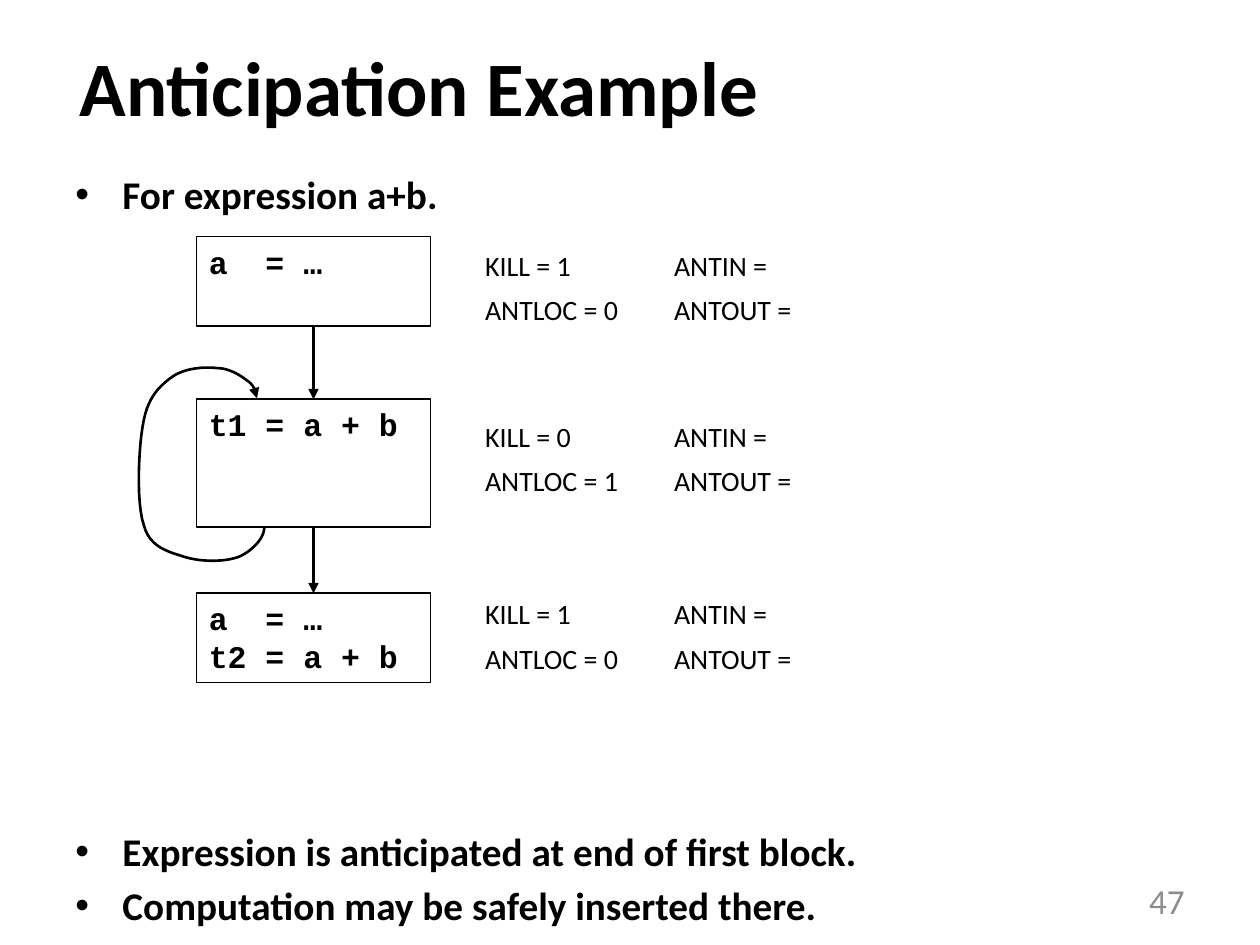
from dataclasses import dataclass

import pptx
import pptx.dml.color
import pptx.enum.shapes
import pptx.enum.text
import pptx.oxml
import pptx.oxml.ns
import pptx.util
from pptx.util import Cm, Pt

COLORS = {"ink": "000000", "number": "8C8C8C"}
TITLE = dict(name="Calibri", size=Pt(44), bold=True)
BODY = dict(name="Calibri", size=Pt(22.4), bold=True)
CODE = dict(name="Courier New", size=Pt(18), bold=True)
LABEL = dict(name="Calibri", size=Pt(16))
NUMBER = dict(name="Calibri", size=Pt(20))

BLOCK_LEFT, BLOCK_WIDTH = 3.96, 4.72
KILL_LEFT, ANTICIPATED_LEFT = 9.53, 13.34
CURVE_STEPS = 12


@dataclass
class Block:
    top: float
    height: float
    code: list[str]
    label_top: float
    kill: int
    antloc: int


BLOCKS = [
    Block(4.77, 1.8, ["a  = …"], 4.88, 1, 0),
    Block(8.05, 2.57, ["t1 = a + b"], 8.33, 0, 1),
    Block(11.96, 1.8, ["a  = …", "t2 = a + b"], 11.91, 1, 0),
]

# Loop edge: start point, then two control points and an end point per curve
LOOP_START = (5.33, 10.62)
LOOP_CURVES = [
    ((5.33, 10.87), (5.05, 11.13), (4.8, 11.23)),
    ((4.52, 11.33), (4.06, 11.33), (3.73, 11.23)),
    ((3.43, 11.13), (3.02, 11.05), (2.9, 10.59)),
    ((2.74, 10.13), (2.79, 8.97), (2.9, 8.46)),
    ((3.0, 7.98), (3.23, 7.77), (3.48, 7.59)),
    ((3.73, 7.42), (4.11, 7.39), (4.37, 7.42)),
    ((4.62, 7.42), (4.85, 7.57), (4.98, 7.67)),
    ((5.13, 7.77), (5.16, 7.9), (5.18, 8.03)),
]


def rgb(color: str):
    return pptx.dml.color.RGBColor.from_string(COLORS[color])


def write(frame, lines: list[str], font: dict, color: str = "ink",
          align: str = "LEFT", before: float = 0) -> None:
    """Fill a text frame with one formatted paragraph per line."""
    frame.text = "\n".join(lines)
    for paragraph in frame.paragraphs:
        paragraph.alignment = getattr(pptx.enum.text.PP_ALIGN, align)
        paragraph.space_before = Pt(before)
        for run in paragraph.runs:
            for attribute, value in font.items():
                setattr(run.font, attribute, value)
            run.font.color.rgb = rgb(color)


def add_text(slide, left: float, top: float, width: float, height: float,
             lines: list[str], font: dict, wrap: bool = True, **options):
    box = slide.shapes.add_textbox(Cm(left), Cm(top), Cm(width), Cm(height))
    box.text_frame.word_wrap = wrap
    write(box.text_frame, lines, font, **options)
    return box


def add_bullets(frame) -> None:
    for paragraph in frame.paragraphs:
        properties = paragraph._p.get_or_add_pPr()
        properties.set("marL", str(Cm(0.95)))
        properties.set("indent", str(-Cm(0.95)))
        for tag, name, value in (("a:buFont", "typeface", "Arial"),
                                 ("a:buChar", "char", "•")):
            bullet = pptx.oxml.parse_xml(f"<{tag} {pptx.oxml.ns.nsdecls('a')}/>")
            bullet.set(name, value)
            properties.append(bullet)


def add_block(slide, block: Block):
    """Draw a basic block with its data-flow facts beside it."""
    shape = slide.shapes.add_shape(
        pptx.enum.shapes.MSO_SHAPE.RECTANGLE,
        Cm(BLOCK_LEFT), Cm(block.top), Cm(BLOCK_WIDTH), Cm(block.height))
    shape.shadow.inherit = False
    shape.fill.background()
    shape.line.color.rgb = rgb("ink")
    shape.line.width = Pt(1)
    shape.text_frame.vertical_anchor = pptx.enum.text.MSO_ANCHOR.TOP
    write(shape.text_frame, block.code, CODE)

    facts = [f"KILL = {block.kill}", f"ANTLOC = {block.antloc}"]
    add_text(slide, KILL_LEFT, block.label_top, 3.25, 1.83, facts, LABEL,
             wrap=False, before=6)
    add_text(slide, ANTICIPATED_LEFT, block.label_top, 2.95, 1.83,
             ["ANTIN =", "ANTOUT ="], LABEL, wrap=False, before=6)
    return shape


def style_arrow(shape) -> None:
    shape.line.color.rgb = rgb("ink")
    shape.line.width = Pt(1.5)
    namespace = pptx.oxml.ns.nsdecls("a")
    outline = shape.element.spPr.find(pptx.oxml.ns.qn("a:ln"))
    outline.append(pptx.oxml.parse_xml(f'<a:tailEnd {namespace} type="triangle"/>'))


def add_arrow(slide, upper, lower) -> None:
    connector = slide.shapes.add_connector(
        pptx.enum.shapes.MSO_CONNECTOR.STRAIGHT, 0, 0, 0, 0)
    connector.begin_connect(upper, 2)
    connector.end_connect(lower, 0)
    style_arrow(connector)
    connector.element.spPr.append(
        pptx.oxml.parse_xml(f"<a:effectLst {pptx.oxml.ns.nsdecls('a')}/>"))


def curve_points(start: tuple, curves: list[tuple]) -> list[tuple]:
    """Sample a chain of cubic Bézier curves."""
    points = []
    for first, second, end in curves:
        for step in range(1, CURVE_STEPS + 1):
            t = step / CURVE_STEPS
            weights = ((1 - t) ** 3, 3 * t * (1 - t) ** 2, 3 * t * t * (1 - t), t ** 3)
            corners = (start, first, second, end)
            points.append(tuple(
                Cm(sum(weight * corner[axis] for weight, corner in zip(weights, corners)))
                for axis in (0, 1)))
        start = end
    return points


def add_loop(slide) -> None:
    builder = slide.shapes.build_freeform(*(Cm(value) for value in LOOP_START))
    builder.add_line_segments(curve_points(LOOP_START, LOOP_CURVES), close=False)
    loop = builder.convert_to_shape()
    loop.shadow.inherit = False
    loop.fill.background()
    style_arrow(loop)


def main() -> None:
    presentation = pptx.Presentation()
    presentation.slide_width, presentation.slide_height = Cm(25.4), Cm(19.05)
    slide = presentation.slides.add_slide(presentation.slide_layouts[5])

    # Title
    title = slide.shapes.title
    title.left, title.top, title.width, title.height = Cm(1.35), Cm(0.13), Cm(22.86), Cm(3.18)
    title.text_frame.vertical_anchor = pptx.enum.text.MSO_ANCHOR.MIDDLE
    write(title.text_frame, ["Anticipation Example"], TITLE)

    # Bullets, with room for the diagram after the first one
    body = add_text(slide, 1.27, 3.3, 22.94, 13.72, [
        "For expression a+b.",
        "Expression is anticipated at end of first block.",
        "Computation may be safely inserted there.",
    ], BODY, before=4)
    body.text_frame.paragraphs[1].space_before = Pt(349)
    add_bullets(body.text_frame)

    # Slide number
    number = add_text(slide, 18.21, 17.65, 5.92, 1.02, ["47"], NUMBER,
                      color="number", align="RIGHT")
    number.text_frame.vertical_anchor = pptx.enum.text.MSO_ANCHOR.MIDDLE

    # Control-flow graph
    shapes = [add_block(slide, block) for block in BLOCKS]
    for upper, lower in zip(shapes, shapes[1:]):
        add_arrow(slide, upper, lower)
    add_loop(slide)

    presentation.save("out.pptx")


if __name__ == "__main__":
    main()
